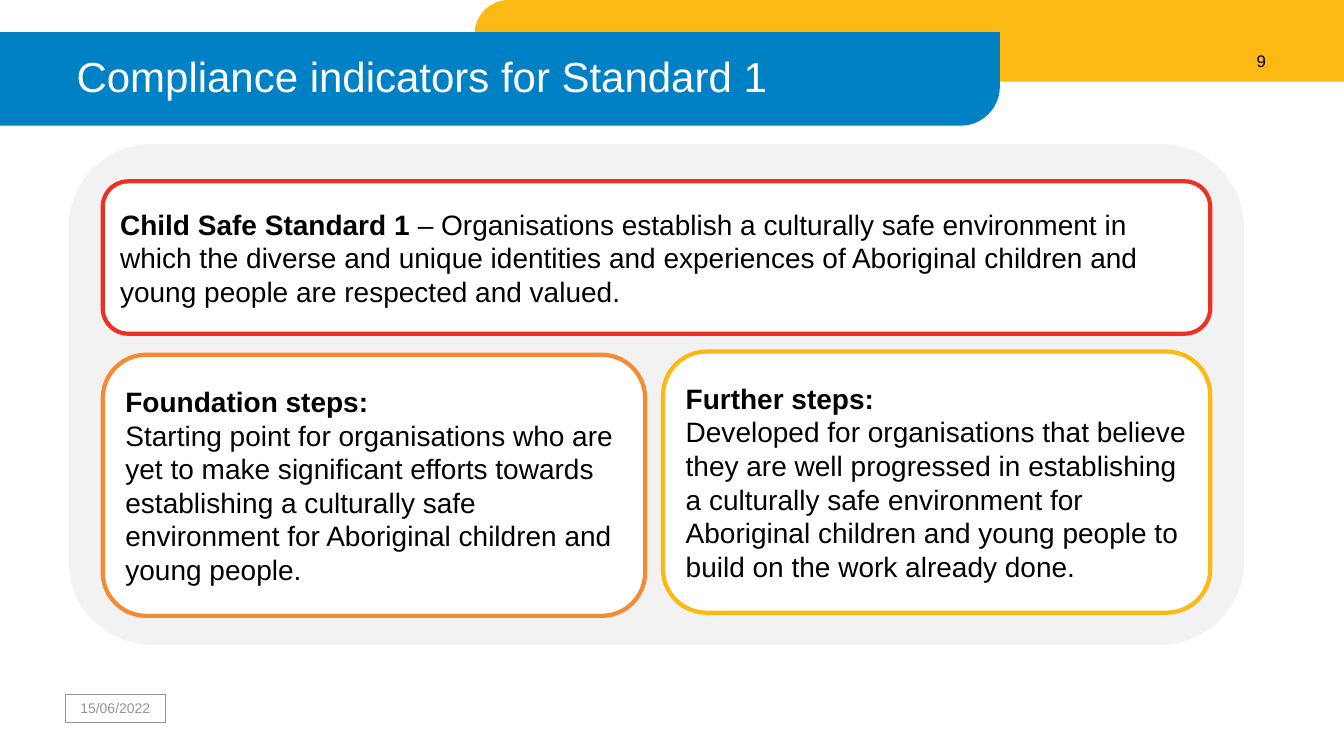
from pptx import Presentation
from pptx.dml.color import RGBColor
from pptx.enum.shapes import MSO_SHAPE as Kind
from pptx.enum.text import MSO_ANCHOR as Anchor, PP_ALIGN as Align
from pptx.util import Cm, Pt

BLUE = RGBColor(0x00, 0x81, 0xC6)
GOLD = RGBColor(0xFD, 0xB9, 0x13)
RED = RGBColor(0xEE, 0x30, 0x24)
ORANGE = RGBColor(0xF6, 0x8A, 0x33)
PALE = RGBColor(0xF2, 0xF2, 0xF2)
GREY = RGBColor(0x93, 0x95, 0x98)
WHITE = RGBColor(0xFF, 0xFF, 0xFF)
BLACK = RGBColor(0x00, 0x00, 0x00)

deck = Presentation()
deck.slide_width, deck.slide_height = Cm(33.87), Cm(19.05)
slide = deck.slides.add_slide(deck.slide_layouts[6])


def add_box(kind, place, fill=None, edge=None, width=3):
    """Add a shape, or a text box when kind is None."""
    place = [Cm(n) for n in place]
    if kind is None:
        return slide.shapes.add_textbox(*place)
    box = slide.shapes.add_shape(kind, *place)
    box.shadow.inherit = False
    if fill is None:
        box.fill.background()
    else:
        box.fill.solid()
        box.fill.fore_color.rgb = fill
    if edge is None:
        box.line.fill.background()
    else:
        box.line.color.rgb = edge
        box.line.width = Pt(width)
    return box


def write(box, lines, size, color, align=Align.LEFT):
    """Fill a box; each line is a list of (text, bold) runs."""
    frame = box.text_frame
    frame.word_wrap = True
    frame.vertical_anchor = Anchor.MIDDLE
    look = {"name": "Arial", "size": Pt(size)}
    for i, line in enumerate(lines):
        para = frame.add_paragraph() if i else frame.paragraphs[0]
        para.alignment = align
        for text, bold in line:
            run = para.add_run()
            run.text = text
            run.font.color.rgb = color
            for key, value in {**look, "bold": bold}.items():
                setattr(run.font, key, value)
    return frame


# Header bands, each with one round corner
bands = [
    ((11.96, 0, 21.91, 2.06), GOLD, "flipH"),
    ((0, 0.81, 25.2, 2.36), BLUE, "flipV"),
]
for place, color, flip in bands:
    band = add_box(Kind.ROUND_1_RECTANGLE, place, color)
    band.adjustments[0] = 0.42
    band._element.spPr.xfrm.set(flip, "1")

# Title
title = add_box(None, (1.68, 0.81, 21.95, 2.36))
frame = write(title, [[("Compliance indicators for Standard 1", False)]], 30, WHITE)
frame.paragraphs[0].line_spacing = 0.9

# Slide number
number = add_box(None, (28.8, 0, 3.35, 3.2))
frame = write(number, [[("9", False)]], 12, BLACK, Align.RIGHT)
frame.margin_top = 0

# Date
date = add_box(Kind.RECTANGLE, (1.65, 17.5, 2.51, 0.69), edge=GREY, width=0.25)
write(date, [[("15/06/2022", False)]], 10, GREY, Align.CENTER)

# Panel and cards
add_box(Kind.ROUNDED_RECTANGLE, (1.73, 3.63, 29.62, 12.62), PALE)
cards = [
    ((2.59, 4.57, 27.91, 3.84), RED, [
        [("Child Safe Standard 1 ", True),
         ("– Organisations establish a culturally safe environment in which "
          "the diverse and unique identities and experiences of Aboriginal "
          "children and young people are respected and valued.", False)],
    ]),
    ((2.59, 8.94, 13.67, 6.58), ORANGE, [
        [("Foundation steps:", True)],
        [("Starting point for organisations who are yet to make significant "
          "efforts towards establishing a culturally safe environment for "
          "Aboriginal children and young people.", False)],
    ]),
    ((16.71, 8.86, 13.79, 6.58), GOLD, [
        [("Further steps:", True)],
        [("Developed for organisations that believe they are well progressed "
          "in establishing a culturally safe environment for Aboriginal "
          "children and young people to build on the work already done.", False)],
    ]),
]
for place, edge, lines in cards:
    card = add_box(Kind.ROUNDED_RECTANGLE, place, WHITE, edge)
    write(card, lines, 20, BLACK)

deck.save("out.pptx")
